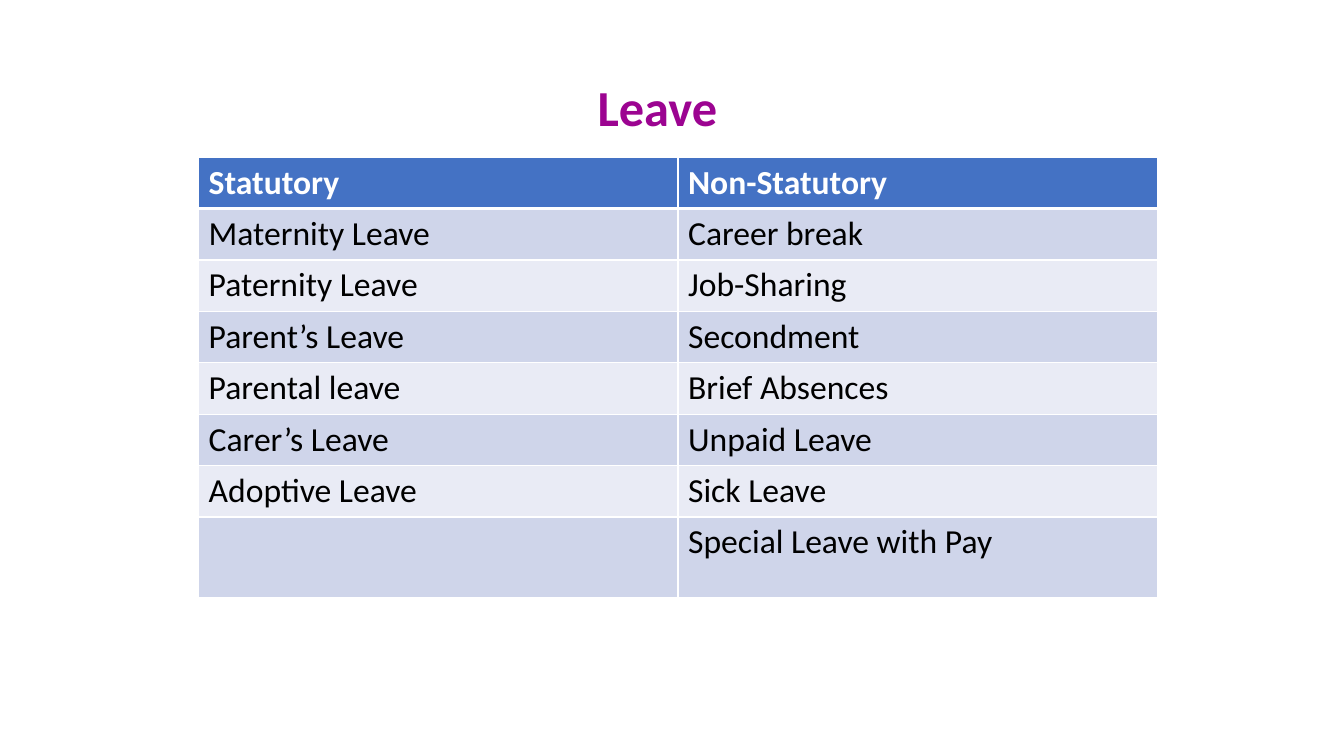
from lxml import etree
from pptx import Presentation
from pptx.dml.color import RGBColor
from pptx.enum.text import PP_ALIGN
from pptx.oxml.ns import qn
from pptx.util import Inches, Pt

PURPLE = RGBColor(0x9C, 0x04, 0x91)
BLUE = RGBColor(0x44, 0x72, 0xC4)
BAND_DARK = RGBColor(0xCF, 0xD5, 0xEA)
BAND_LIGHT = RGBColor(0xE9, 0xEB, 0xF5)
WHITE = RGBColor(0xFF, 0xFF, 0xFF)
BLACK = RGBColor(0, 0, 0)

ROW_HEIGHT = 0.51
LAST_ROW_HEIGHT = 0.8
LEAVE_TYPES = [
    ("Statutory", "Non-Statutory"),
    ("Maternity Leave", "Career break"),
    ("Paternity Leave", "Job-Sharing"),
    ("Parent’s Leave", "Secondment"),
    ("Parental leave", "Brief Absences"),
    ("Carer’s Leave", "Unpaid Leave"),
    ("Adoptive Leave", "Sick Leave"),
    ("", "Special Leave with Pay"),
]


def set_text(p, text, size, color, bold):
    p.text = text
    p.font.name = "Calibri"
    p.font.size = Pt(size)
    p.font.color.rgb = color
    p.font.bold = bold


def set_border(cell, side, width):
    """Draw one white border; side is L, R, T or B."""
    tc_pr = cell._tc.get_or_add_tcPr()
    ln = etree.Element(qn(f"a:ln{side}"), w=str(Pt(width)))
    fill = etree.SubElement(ln, qn("a:solidFill"))
    etree.SubElement(fill, qn("a:srgbClr"), val=str(WHITE))
    # Borders come before the fill in a cell's properties
    tc_pr.insert(len(tc_pr.findall("*")) - 1, ln)


def add_title(slide, text):
    sp = slide.shapes.add_textbox(Inches(1.65), Inches(0.71), Inches(9.74), Inches(0.75))
    tf = sp.text_frame
    tf.word_wrap = True
    p = tf.paragraphs[0]
    set_text(p, text, 36, PURPLE, True)
    p.alignment = PP_ALIGN.CENTER


def add_leave_table(slide, rows):
    height = ROW_HEIGHT * (len(rows) - 1) + LAST_ROW_HEIGHT
    table = slide.shapes.add_table(
        len(rows), 2, Inches(1.97), Inches(1.56), Inches(9.51), Inches(height)
    ).table
    for i, texts in enumerate(rows):
        is_header = i == 0
        is_last = i == len(rows) - 1
        table.rows[i].height = Inches(LAST_ROW_HEIGHT if is_last else ROW_HEIGHT)
        band = BLUE if is_header else BAND_DARK if i % 2 else BAND_LIGHT
        for j, text in enumerate(texts):
            cell = table.cell(i, j)
            cell.fill.solid()
            cell.fill.fore_color.rgb = band
            set_text(cell.text_frame.paragraphs[0], text, 24,
                     WHITE if is_header else BLACK, is_header)
            # The line under the header is heavier than the rest
            widths = {"L": 1, "R": 1, "T": 3 if i == 1 else 1, "B": 3 if is_header else 1}
            for side, width in widths.items():
                set_border(cell, side, width)


def main():
    prs = Presentation()
    prs.slide_width, prs.slide_height = Inches(13.33), Inches(7.5)
    slide = prs.slides.add_slide(prs.slide_layouts[6])

    # Heading
    add_title(slide, "Leave")

    # Two columns of leave types
    add_leave_table(slide, LEAVE_TYPES)

    prs.save("out.pptx")


if __name__ == "__main__":
    main()
